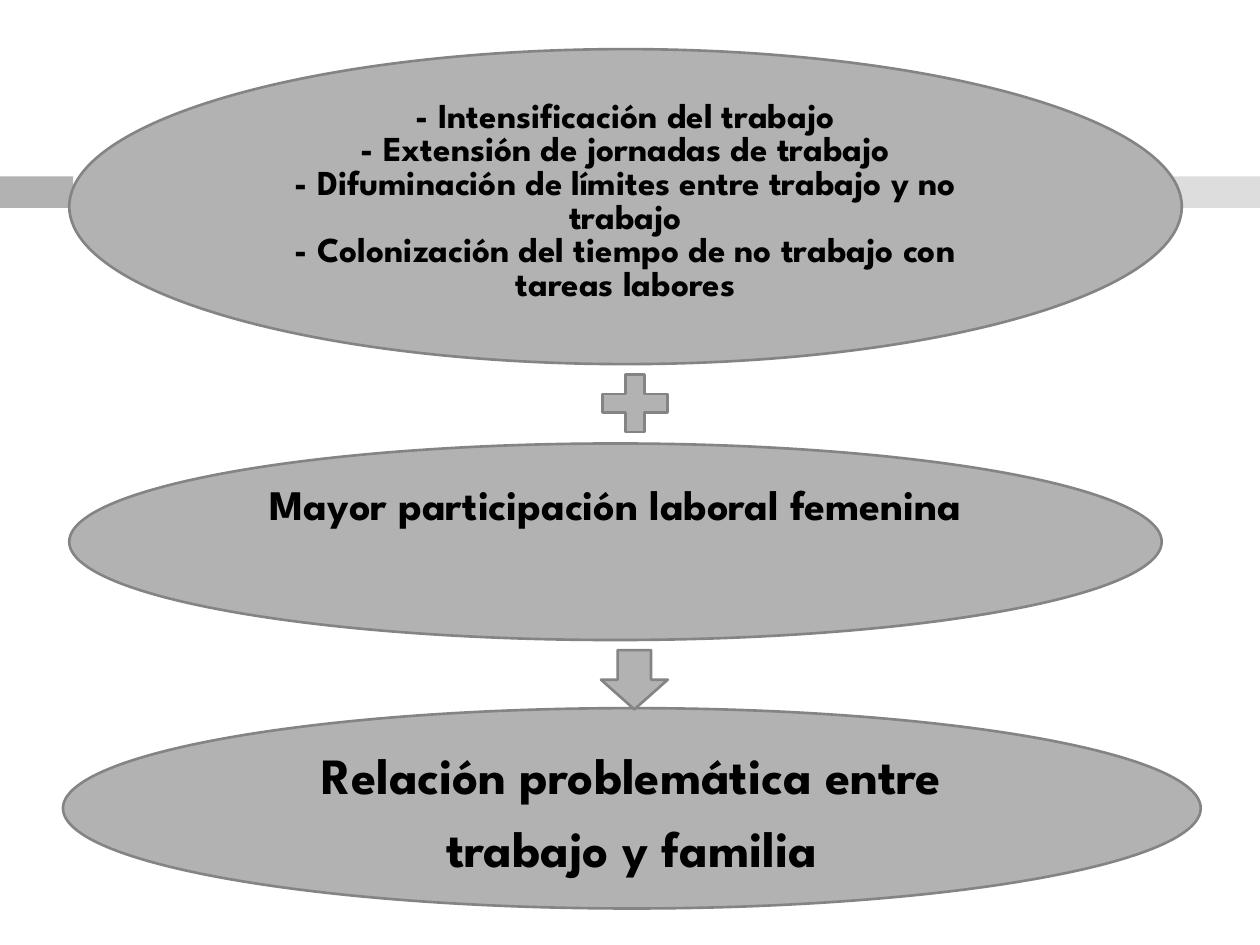
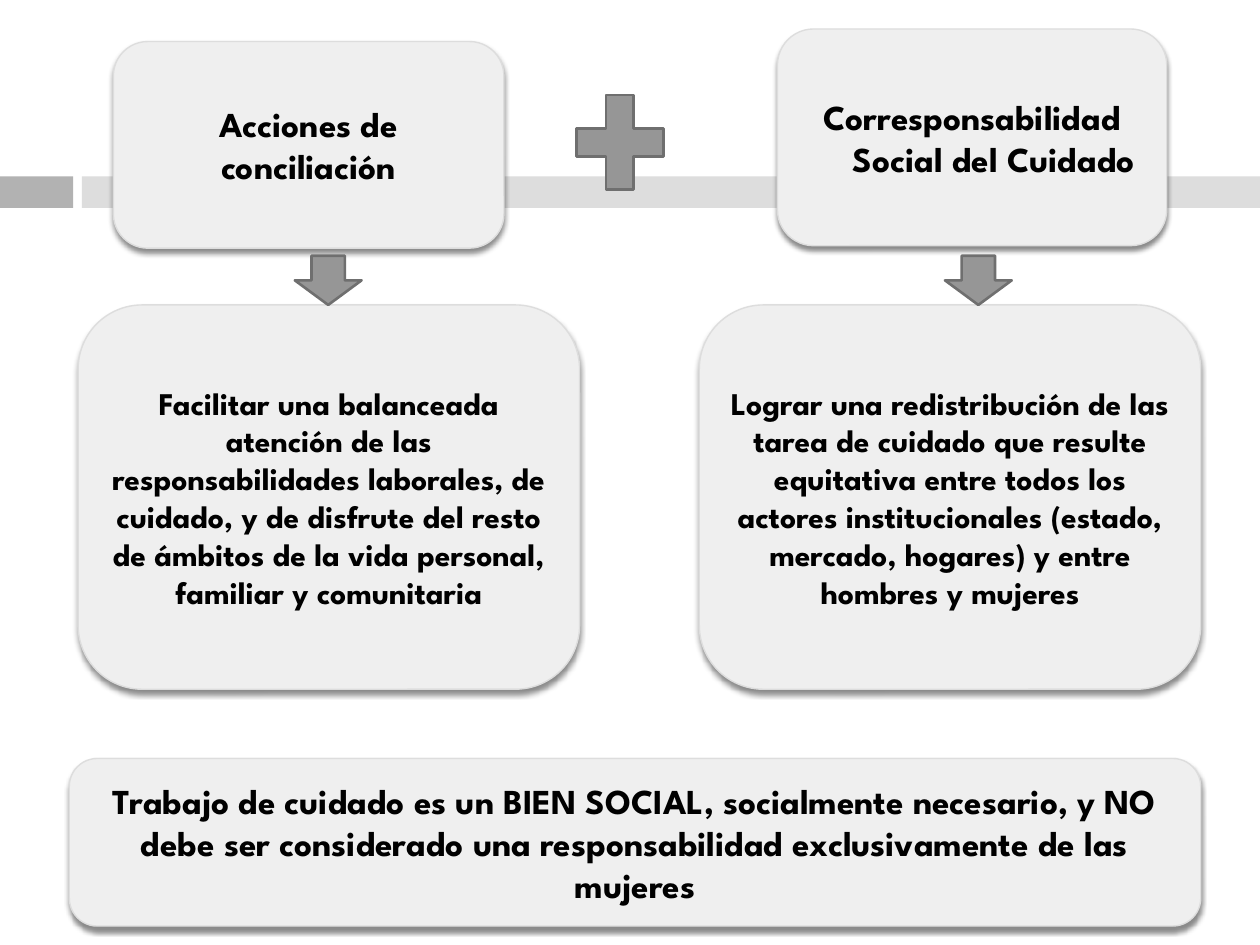
import lxml.etree
import pptx
import pptx.dml.color
import pptx.enum.shapes
import pptx.enum.text
import pptx.oxml.ns
import pptx.util

Inches = pptx.util.Inches
Pt = pptx.util.Pt
SHAPE = pptx.enum.shapes.MSO_SHAPE
ANCHOR = pptx.enum.text.MSO_ANCHOR


def colour(value):
    return pptx.dml.color.RGBColor.from_string(value)


def child(parent, tag, **attributes):
    return lxml.etree.SubElement(parent, pptx.oxml.ns.qn(tag), attributes)


def write(box, lines, size, anchor=ANCHOR.TOP, indent=0, gap=0, spacing=1.0):
    """Fill a box with centred bold paragraphs; indent is a hanging one."""
    frame = box.text_frame
    frame.word_wrap = True
    frame.auto_size = pptx.enum.text.MSO_AUTO_SIZE.NONE
    frame.vertical_anchor = anchor
    for number, line in enumerate(lines):
        para = frame.add_paragraph() if number else frame.paragraphs[0]
        para.alignment = pptx.enum.text.PP_ALIGN.CENTER
        para.line_spacing = spacing
        para.space_before = Pt(gap if number else 0)
        properties = para._p.get_or_add_pPr()
        properties.set("marL", str(Inches(indent)))
        properties.set("indent", str(Inches(-indent)))
        child(properties, "a:buNone")
        span = para.add_run()
        span.text = line
        span.font.name = Deck.font
        span.font.size = Pt(size)
        span.font.bold = True
        span.font.color.rgb = colour(Deck.ink)


class Deck:
    font = "League Spartan"
    ink = "000000"
    grey, grey_edge = "B2B2B2", "848484"
    dark, dark_edge = "969696", "6F6F6F"
    pale, pale_edge = "EFEFEF", "DDDDDD"

    def __init__(self):
        self.show = pptx.Presentation()
        self.show.slide_width = Inches(10)
        self.show.slide_height = Inches(7.5)
        self.page = None

    def new_page(self):
        self.page = self.show.slides.add_slide(self.show.slide_layouts[1])
        title = self.page.shapes.title
        title.element.getparent().remove(title.element)

    def master_bands(self):
        """Draw the two bands and move them to the slide master."""
        tree = self.show.slide_master.shapes.element
        bands = [(0, 0.58, self.grey), (0.65, 9.35, self.pale_edge)]
        for number, (left, width, fill) in enumerate(bands, start=20):
            band = self.shape(SHAPE.RECTANGLE, (left, 1.4, width, 0.25), fill)
            band.element.nvSpPr.cNvPr.set("id", str(number))
            tree.append(band.element)

    def shape(self, kind, place, fill, edge=None, weight=1.5):
        box = self.page.shapes.add_shape(kind, *map(Inches, place))
        return self.paint(box, fill, edge, weight)

    def body(self, preset, place, fill, edge, weight=1.5):
        """Move the body placeholder and give it a preset outline."""
        box = self.page.placeholders[1]
        box.left, box.top, box.width, box.height = map(Inches, place)
        geometry = child(box.element.spPr, "a:prstGeom", prst=preset)
        child(geometry, "a:avLst")
        return self.paint(box, fill, edge, weight)

    def paint(self, box, fill, edge, weight):
        box.shadow.inherit = False
        box.fill.solid()
        box.fill.fore_color.rgb = colour(fill)
        if edge:
            box.line.color.rgb = colour(edge)
            box.line.width = Pt(weight)
        else:
            box.line.fill.background()
        return box

    def ellipse(self, place, lines, size, **layout):
        box = self.shape(SHAPE.OVAL, place, self.grey, self.grey_edge)
        write(box, lines, size, **layout)

    def card(self, place, text, size, is_body=False, **layout):
        """Pale rounded card with a soft shadow below it."""
        style = (place, self.pale, self.pale_edge, 0.79)
        if is_body:
            box = self.body("roundRect", *style)
        else:
            box = self.shape(SHAPE.ROUNDED_RECTANGLE, *style)
        effects = box.element.spPr.find(pptx.oxml.ns.qn("a:effectLst"))
        shadow = child(effects, "a:outerShdw", blurRad=str(Pt(3)),
                       dist=str(Pt(2.4)), dir="5400000", rotWithShape="0")
        tint = child(shadow, "a:srgbClr", val="000000")
        child(tint, "a:alpha", val="45000")
        write(box, [text], size, anchor=ANCHOR.MIDDLE, **layout)


def work_and_family(deck):
    deck.new_page()
    deck.master_bands()
    result = deck.body("ellipse", (0.5, 5.62, 9.03, 1.59),
                       deck.grey, deck.grey_edge)
    write(result, ["Relación problemática entre", "trabajo y familia"], 29,
          indent=0.35, gap=7)
    deck.ellipse((0.55, 0.39, 8.83, 2.5), [
        "- Intensificación del trabajo",
        "- Extensión de jornadas de trabajo",
        "- Difuminación de límites entre trabajo y no trabajo",
        "- Colonización del tiempo de no trabajo con tareas labores",
    ], 20, spacing=0.8)
    deck.ellipse((0.55, 3.52, 8.67, 1.56),
                 ["Mayor participación laboral femenina"], 24, indent=0.3)
    deck.shape(SHAPE.DOWN_ARROW, (4.77, 5.16, 0.53, 0.47),
               deck.grey, deck.grey_edge)
    deck.shape(SHAPE.MATH_PLUS, (4.69, 2.89, 0.7, 0.62),
               deck.grey, deck.grey_edge)


def care_as_social_good(deck):
    deck.new_page()
    deck.card((6.17, 0.23, 3.09, 1.72),
              "Corresponsabilidad Social del Cuidado", 20,
              is_body=True, indent=0.35)
    deck.card((0.9, 0.33, 3.1, 1.64), "Acciones de conciliación", 20)
    deck.shape(SHAPE.MATH_PLUS, (4.45, 0.62, 0.94, 1.02),
               deck.dark, deck.dark_edge)
    goals = [
        (0.62, 2.34, "Facilitar una balanceada atención de las "
         "responsabilidades laborales, de cuidado, y de disfrute del resto "
         "de ámbitos de la vida personal, familiar y comunitaria"),
        (5.55, 7.5, "Lograr una redistribución de las tarea de cuidado que "
         "resulte equitativa entre todos los actores institucionales "
         "(estado, mercado, hogares) y entre hombres y mujeres"),
    ]
    for card_left, arrow_left, goal in goals:
        deck.card((card_left, 2.42, 3.98, 3.05), goal, 18)
        deck.shape(SHAPE.DOWN_ARROW, (arrow_left, 2.03, 0.53, 0.39),
                   deck.dark, deck.dark_edge)
    deck.card((0.55, 6.02, 8.98, 1.33),
              "Trabajo de cuidado es un BIEN SOCIAL, socialmente necesario, "
              "y NO debe ser considerado una responsabilidad exclusivamente "
              "de las mujeres", 20)


def main():
    deck = Deck()
    work_and_family(deck)
    care_as_social_good(deck)
    deck.show.save("out.pptx")


if __name__ == "__main__":
    main()
